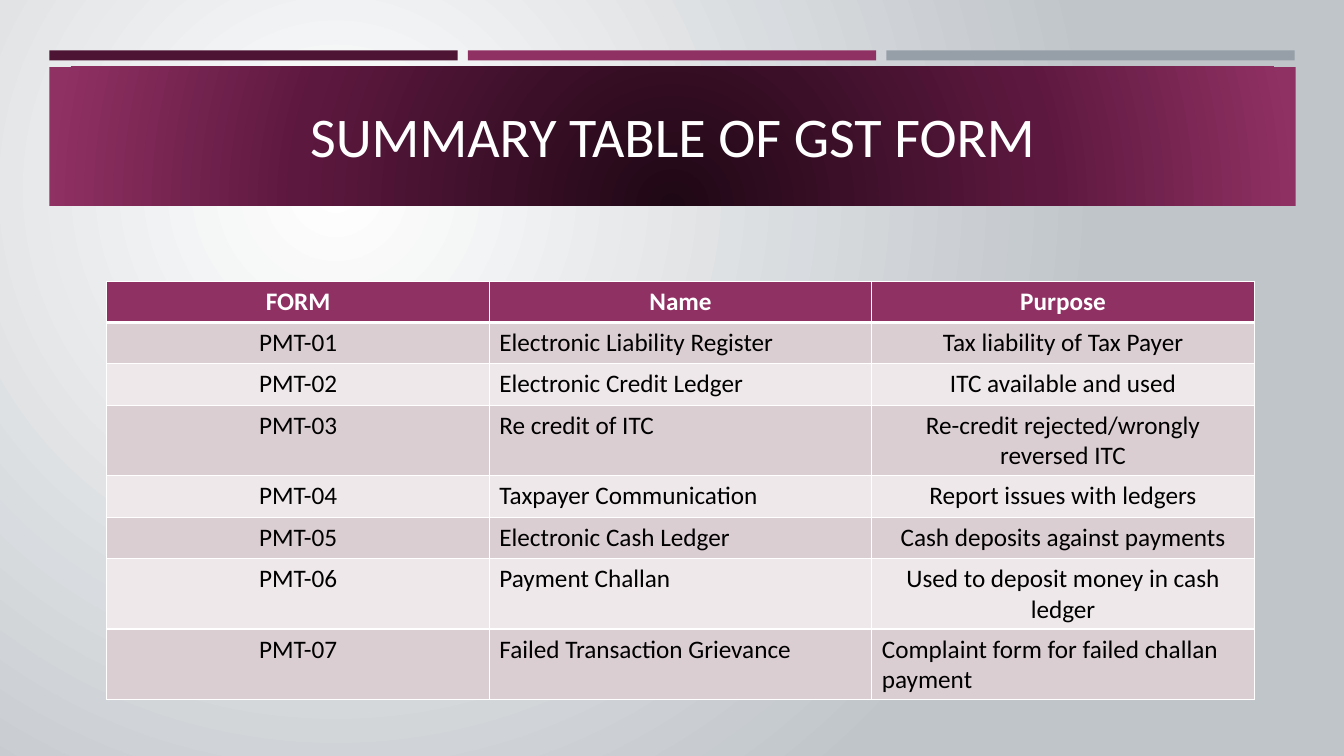
from lxml import etree
from pptx import Presentation
from pptx.dml.color import RGBColor
from pptx.enum.shapes import MSO_SHAPE
from pptx.enum.text import MSO_ANCHOR, PP_ALIGN
from pptx.oxml.ns import qn
from pptx.util import Inches, Pt

RECT = MSO_SHAPE.RECTANGLE
MIDDLE, TOP = MSO_ANCHOR.MIDDLE, MSO_ANCHOR.TOP
CENTER, LEFT = PP_ALIGN.CENTER, PP_ALIGN.LEFT

WHITE = RGBColor(0xFF, 0xFF, 0xFF)
BLACK = RGBColor(0x00, 0x00, 0x00)
SILVER = RGBColor(0xC0, 0xC5, 0xCA)
PLUM = RGBColor(0x4D, 0x14, 0x34)
MAGENTA = RGBColor(0x90, 0x31, 0x63)
GREY = RGBColor(0x96, 0x9F, 0xA7)
DARK = RGBColor(0x1F, 0x08, 0x15)
WINE = RGBColor(0x5D, 0x18, 0x3F)
BAND_DARK = RGBColor(0xDB, 0xCE, 0xD3)
BAND_LIGHT = RGBColor(0xEE, 0xE8, 0xEA)
FONT = "Calibri"


def set_radial(root, stops, focus):
    """Turn the gradient fill inside root into a circular one."""
    grad = next(root.iter(qn("a:gradFill")))
    for child in list(grad):
        grad.remove(child)
    gs_lst = etree.SubElement(grad, qn("a:gsLst"))
    for pos, color in stops:
        gs = etree.SubElement(gs_lst, qn("a:gs"), pos=str(pos * 1000))
        etree.SubElement(gs, qn("a:srgbClr"), val=str(color))
    circle = etree.SubElement(grad, qn("a:path"), path="circle")
    sides = {side: str(share * 1000) for side, share in zip("ltrb", focus)}
    etree.SubElement(circle, qn("a:fillToRect"), **sides)


def add_text(tf, text, size, color, align, bold=False):
    p = tf.paragraphs[0]
    p.alignment = align
    r = p.add_run()
    r.text = text
    r.font.name = FONT
    r.font.size = Pt(size)
    r.font.bold = bold
    r.font.color.rgb = color


prs = Presentation()
prs.slide_width, prs.slide_height = Inches(13.33), Inches(7.5)
s = prs.slides.add_slide(prs.slide_layouts[6])

# Background
s.background.fill.gradient()
set_radial(s.background._cSld, [(0, WHITE), (100, SILVER)], (50, 50, 100, 100))

# Three accent bars
MARGIN, BAR_W, BAR_STEP = 0.49, 4.05, 4.15
for i, color in enumerate((PLUM, MAGENTA, GREY)):
    sp = s.shapes.add_shape(RECT, Inches(MARGIN + i * BAR_STEP), Inches(0.5),
                            Inches(BAR_W), Inches(0.1))
    sp.shadow.inherit = False
    sp.fill.solid()
    sp.fill.fore_color.rgb = color
    sp.line.fill.background()

# Title banner
banner = s.shapes.add_shape(RECT, Inches(MARGIN), Inches(0.66),
                            Inches(12.36), Inches(1.38))
banner.shadow.inherit = False
banner.line.fill.background()
banner.fill.gradient()
set_radial(banner._element, [(0, DARK), (60, WINE), (100, MAGENTA)],
           (50, 130, 50, -30))

title = s.shapes.add_textbox(Inches(0.64), Inches(0.8), Inches(12.06), Inches(1.08))
tf = title.text_frame
tf.word_wrap = True
tf.vertical_anchor = MIDDLE
add_text(tf, "SUMMARY TABLE OF GST FORM", 40, WHITE, CENTER)

# Table of forms
rows = [
    ("FORM", "Name", "Purpose"),
    ("PMT-01", "Electronic Liability Register", "Tax liability of Tax Payer"),
    ("PMT-02", "Electronic Credit Ledger", "ITC available and used"),
    ("PMT-03", "Re credit of ITC", "Re-credit rejected/wrongly reversed ITC"),
    ("PMT-04", "Taxpayer Communication", "Report issues with ledgers"),
    ("PMT-05", "Electronic Cash Ledger", "Cash deposits against payments"),
    ("PMT-06", "Payment Challan", "Used to deposit money in cash ledger"),
    ("PMT-07", "Failed Transaction Grievance", "Complaint form for failed challan payment"),
]
LAST = len(rows) - 1
ROW_H = 0.41
MIDDLE_CELLS = {(1, 1), (LAST, 2)}
table = s.shapes.add_table(len(rows), 3, Inches(1.06), Inches(2.79),
                           Inches(11.38), Inches(ROW_H * len(rows))).table

for i, row in enumerate(rows):
    header = i == 0
    fill = MAGENTA if header else BAND_DARK if i % 2 else BAND_LIGHT
    for j, text in enumerate(row):
        cell = table.cell(i, j)
        cell.vertical_anchor = MIDDLE if (i, j) in MIDDLE_CELLS else TOP
        left = (j == 1 and not header) or (i, j) == (LAST, 2)
        add_text(cell.text_frame, text, 18, WHITE if header else BLACK,
                 LEFT if left else CENTER, header)

        # White borders, thick between header and body; they precede the fill
        tc_pr = cell._tc.get_or_add_tcPr()
        for side in ("lnL", "lnR", "lnT", "lnB"):
            thick = (i, side) in ((0, "lnB"), (1, "lnT"))
            ln = etree.SubElement(tc_pr, qn("a:" + side), w=str(Pt(3 if thick else 1)))
            solid = etree.SubElement(ln, qn("a:solidFill"))
            etree.SubElement(solid, qn("a:srgbClr"), val=str(WHITE))
        cell.fill.solid()
        cell.fill.fore_color.rgb = fill

prs.save("out.pptx")
